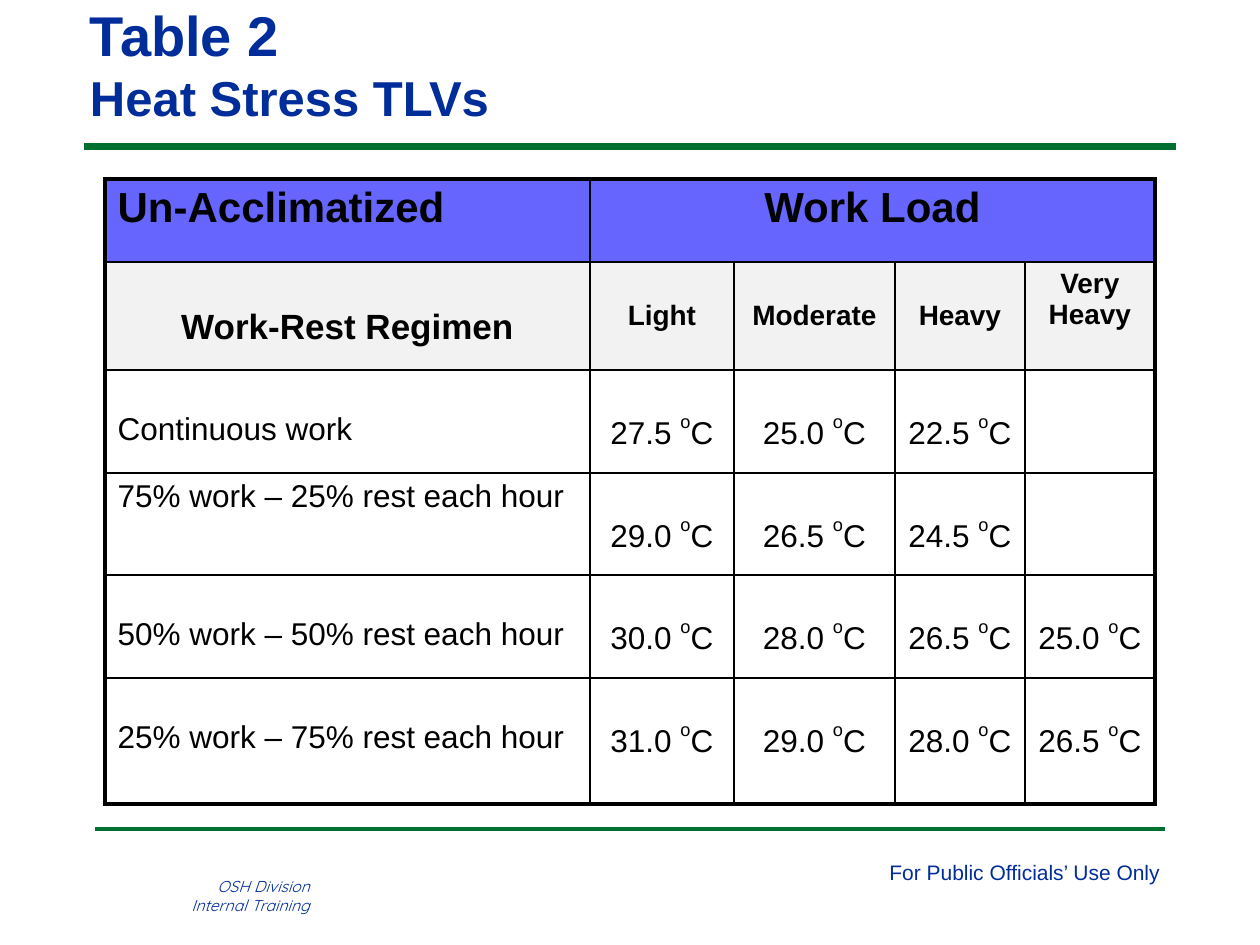
from lxml import etree
from pptx import Presentation
from pptx import util as u
from pptx.dml.color import RGBColor
from pptx.enum import shapes, text
from pptx.oxml.ns import qn

PX = 914400 / 126
NAVY, GREEN, BLACK = "012D9A", "007030", "000000"
VIOLET, PALE = "6666FF", "F2F2F2"
LEFT, CENTER, RIGHT = text.PP_ALIGN.LEFT, text.PP_ALIGN.CENTER, text.PP_ALIGN.RIGHT

COLUMN_WIDTHS = [485, 144, 161, 130, 130]
ROW_HEIGHTS = [83, 108, 103, 102, 103, 126]
WORK_LOADS = ["Light", "Moderate", "Heavy", "Very Heavy"]
LIMITS = [
    ("Continuous work", ["27.5", "25.0", "22.5"]),
    ("75% work – 25% rest each hour", ["29.0", "26.5", "24.5"]),
    ("50% work – 50% rest each hour", ["30.0", "28.0", "26.5", "25.0"]),
    ("25% work – 75% rest each hour", ["31.0", "29.0", "28.0", "26.5"]),
]


def px(value):
    return u.Emu(round(value * PX))


def rgb(value):
    return RGBColor.from_string(value)


def write(paragraph, words, size, font="Arial", color=BLACK, bold=False,
          italic=False, align=LEFT, baseline=0):
    """Append one formatted run to the paragraph."""
    paragraph.alignment = align
    run = paragraph.add_run()
    run.text = words
    run.font.name, run.font.size = font, u.Pt(size)
    run.font.bold, run.font.italic = bold, italic
    run.font.color.rgb = rgb(color)
    if baseline:
        run._r.get_or_add_rPr().set("baseline", str(baseline * 1000))


def add_text(slide, box, lines, wrap=True, insets=None, **style):
    """Add a text box with one paragraph for each (words, size) pair."""
    frame = slide.shapes.add_textbox(*map(px, box)).text_frame
    frame.word_wrap = wrap
    if insets:
        frame.margin_left = frame.margin_right = px(insets[0])
        frame.margin_top = frame.margin_bottom = px(insets[1])
        frame.vertical_anchor = text.MSO_ANCHOR.MIDDLE
    for index, (words, size) in enumerate(lines):
        paragraph = frame.add_paragraph() if index else frame.paragraphs[0]
        write(paragraph, words, size, color=NAVY, **style)


def add_rule(slide, left, right, y, width):
    line = slide.shapes.add_connector(
        shapes.MSO_CONNECTOR.STRAIGHT, px(left), px(y), px(right), px(y))
    line.line.color.rgb = rgb(GREEN)
    line.line.width = u.Pt(width)
    etree.SubElement(line._element.spPr, qn("a:effectLst"))


def set_borders(cell, outer_sides):
    """Draw all four borders, heavier on the table's outer sides."""
    properties = cell._tc.get_or_add_tcPr()
    for index, side in enumerate("LRTB"):
        width = 2.25 if side in outer_sides else 1
        border = etree.Element(qn(f"a:ln{side}"), w=str(u.Pt(width)))
        fill = etree.SubElement(border, qn("a:solidFill"))
        etree.SubElement(fill, qn("a:srgbClr"), val=BLACK)
        properties.insert(index, border)


def format_grid(table):
    last_row, last_column = len(ROW_HEIGHTS) - 1, len(COLUMN_WIDTHS) - 1
    for column, width in zip(table.columns, COLUMN_WIDTHS):
        column.width = px(width)
    for row_index, (row, height) in enumerate(zip(table.rows, ROW_HEIGHTS)):
        row.height = px(height)
        for column_index, cell in enumerate(row.cells):
            if row_index < 2:
                cell.fill.solid()
                cell.fill.fore_color.rgb = rgb((VIOLET, PALE)[row_index])
            else:
                cell.fill.background()
            outer = {"L": column_index == 0, "R": column_index == last_column,
                     "T": row_index == 0, "B": row_index == last_row}
            if row_index == 0 and column_index == 1:
                outer["R"] = True
            set_borders(cell, [side for side in outer if outer[side]])


def fill_cell(cell, words, size, drop=0, **style):
    """Write into a cell, with the text lowered by drop px."""
    cell.margin_top = px(6 + drop)
    write(cell.text_frame.paragraphs[0], words, size, **style)


def add_limits_table(slide):
    table = slide.shapes.add_table(
        len(ROW_HEIGHTS), len(COLUMN_WIDTHS), px(105), px(179),
        px(sum(COLUMN_WIDTHS)), px(sum(ROW_HEIGHTS))).table
    table.first_row = table.horz_banding = False
    format_grid(table)
    table.cell(0, 1).merge(table.cell(0, 4))

    fill_cell(table.cell(0, 0), "Un-Acclimatized", 24, bold=True)
    fill_cell(table.cell(0, 1), "Work Load", 24, bold=True, align=CENTER)
    fill_cell(table.cell(1, 0), "Work-Rest Regimen", 20, drop=40, bold=True, align=CENTER)
    for column, load in enumerate(WORK_LOADS, 1):
        drop = 0 if " " in load else 32
        fill_cell(table.cell(1, column), load, 16, drop, bold=True, align=CENTER)

    for row, (regimen, limits) in enumerate(LIMITS, 2):
        fill_cell(table.cell(row, 0), regimen, 18, drop=0 if row == 3 else 36)
        for column, limit in enumerate(limits, 1):
            cell = table.cell(row, column)
            fill_cell(cell, f"{limit} ", 18, drop=36, align=CENTER)
            paragraph = cell.text_frame.paragraphs[0]
            write(paragraph, "o", 18, align=CENTER, baseline=50)
            write(paragraph, "C", 18, align=CENTER)


def main():
    presentation = Presentation()
    presentation.slide_width, presentation.slide_height = px(1260), px(945)
    slide = presentation.slides.add_slide(presentation.slide_layouts[6])

    add_rule(slide, 84, 1176, 147, 4)
    add_rule(slide, 95, 1165, 829, 2)
    add_text(slide, (877, 853, 299, 38), [("For Public Officials’ Use Only", 12)], wrap=False)
    add_text(slide, (147, 871, 175, 62), [("OSH Division", 9), ("Internal Training", 9)],
             font="Quicksand", italic=True, align=RIGHT)
    add_text(slide, (84, 0, 1176, 127), [("Table 2", 32), ("Heat Stress TLVs", 28)],
             insets=(6, 0), bold=True)
    add_limits_table(slide)
    presentation.save("out.pptx")


if __name__ == "__main__":
    main()
